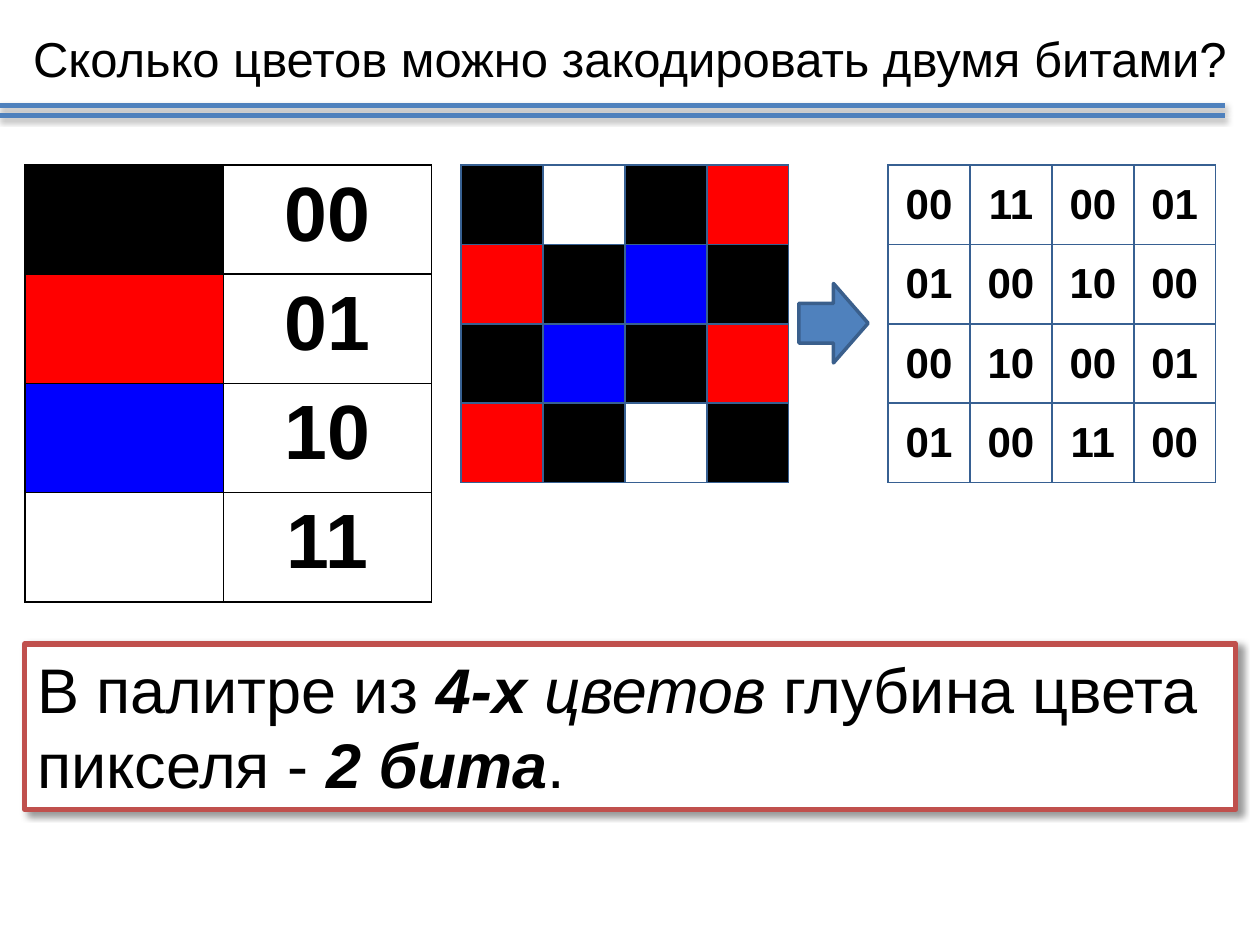
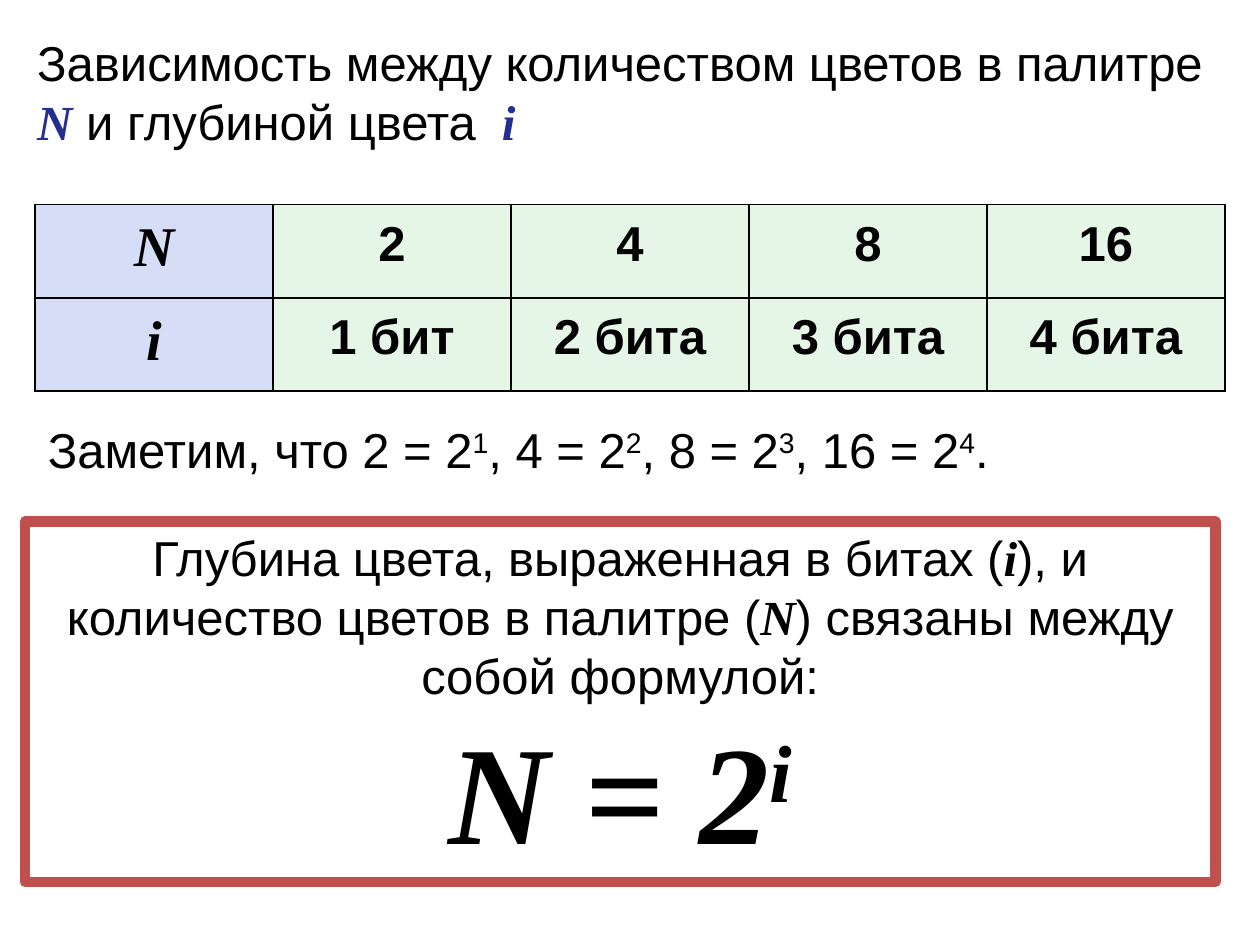
from lxml import etree
from pptx import Presentation
from pptx import util as u
from pptx.dml import color as dml
from pptx.enum import shapes, text
from pptx.oxml import ns

BLACK, WHITE, RED, BLUE = "000000", "FFFFFF", "FF0000", "0000FF"
ACCENT, ACCENT_EDGE, GRID, FRAME = "4F81BD", "3A5F8C", "376092", "C0504D"
HEAD_FILL, VALUE_FILL, SYMBOL_COLOR = "D6DEF7", "E6F6E6", "252F8F"
SANS, SERIF = "Arial", "Times New Roman"
CENTER, LEFT = text.PP_ALIGN.CENTER, text.PP_ALIGN.LEFT
TOP, MIDDLE = text.MSO_ANCHOR.TOP, text.MSO_ANCHOR.MIDDLE
STRONG = {"bold": True, "italic": True}
SYMBOL = {"font": SERIF, **STRONG}
POWER = {"sup": True}
PALETTE = {"00": BLACK, "01": RED, "10": BLUE, "11": WHITE}
PIXELS = ["00 11 00 01", "01 00 10 00", "00 10 00 01", "01 00 11 00"]


def rgb(value):
    """Turn a hex string into a colour."""
    return dml.RGBColor.from_string(value)


def points(*values):
    """Turn numbers into lengths in points."""
    return [u.Pt(v) for v in values]


def add_run(p, content, size=28, font=SANS, color=BLACK, bold=False, italic=False, sup=False):
    """Add one formatted run to a paragraph."""
    r = p.add_run()
    r.text = content
    f = r.font
    f.size, f.name, f.bold, f.italic = u.Pt(size), font, bold, italic
    f.color.rgb = rgb(color)
    if sup:
        f._element.set("baseline", "30000")


def write(tf, *paragraphs, align=LEFT, anchor=TOP, **fmt):
    """Fill a text frame with paragraphs of plain or (text, format) pieces."""
    tf.word_wrap = True
    tf.vertical_anchor = anchor
    for n, pieces in enumerate(paragraphs):
        p = tf.add_paragraph() if n else tf.paragraphs[0]
        p.alignment = align
        for piece in pieces:
            content, own = (piece, {}) if isinstance(piece, str) else piece
            add_run(p, content, **{**fmt, **own})


def add_text(slide, box, *paragraphs, **fmt):
    """Add a text box."""
    write(slide.shapes.add_textbox(*points(*box)).text_frame, *paragraphs, **fmt)


def set_shadow(s, opacity=0, blur=0, dist=0, angle=0):
    """Replace the theme shadow by a given one, or by none."""
    sp_pr = s._element.spPr
    for old in sp_pr.findall(ns.qn("a:effectLst")):
        sp_pr.remove(old)
    effects = etree.SubElement(sp_pr, ns.qn("a:effectLst"))
    if opacity:
        shadow = etree.SubElement(
            effects, ns.qn("a:outerShdw"), blurRad=str(u.Pt(blur)),
            dist=str(u.Pt(dist)), dir=str(angle * 60000), rotWithShape="0")
        tint = etree.SubElement(shadow, ns.qn("a:srgbClr"), val=BLACK)
        etree.SubElement(tint, ns.qn("a:alpha"), val=str(opacity * 1000))


def add_rule(slide, y):
    """Add a shadowed title rule."""
    s = slide.shapes.add_connector(shapes.MSO_CONNECTOR.STRAIGHT, *points(700, y, 0, y))
    s.line.color.rgb, s.line.width = rgb(ACCENT), u.Pt(3)
    set_shadow(s, 35, 3.1, 1.8, 90)


def add_shape(slide, kind, box, fill, line, width, **shadow):
    """Add a filled and outlined preset shape."""
    s = slide.shapes.add_shape(kind, *points(*box))
    s.fill.solid()
    s.fill.fore_color.rgb = rgb(fill)
    s.line.color.rgb, s.line.width = rgb(line), u.Pt(width)
    set_shadow(s, **shadow)
    return s


def set_borders(cell, color):
    """Draw a thin line on each side of a cell."""
    tc_pr = cell._tc.get_or_add_tcPr()
    for side in ("lnL", "lnR", "lnT", "lnB"):
        ln = etree.SubElement(tc_pr, ns.qn("a:" + side), w=str(u.Pt(1)))
        fill = etree.SubElement(ln, ns.qn("a:solidFill"))
        etree.SubElement(fill, ns.qn("a:srgbClr"), val=color)


def add_table(slide, left, top, widths, height, rows, border, pad=None, **fmt):
    """Add a table from rows of (text, fill, own format) cells."""
    frame = slide.shapes.add_table(
        len(rows), len(widths), *points(left, top, sum(widths), height * len(rows)))
    table = frame.table
    for column, width in zip(table.columns, widths):
        column.width = u.Pt(width)
    for y, row in enumerate(rows):
        table.rows[y].height = u.Pt(height)
        for x, (content, fill, own) in enumerate(row):
            cell = table.cell(y, x)
            set_borders(cell, border)
            cell.fill.solid()
            cell.fill.fore_color.rgb = rgb(fill)
            if pad:
                cell.margin_top = cell.margin_bottom = u.Pt(pad)
            if content:
                look = {**fmt, **own}
                cell.vertical_anchor = look.pop("anchor", TOP)
                write_cell(cell, content, **look)


def write_cell(cell, content, **fmt):
    """Write centred bold text in a cell."""
    p = cell.text_frame.paragraphs[0]
    p.alignment = CENTER
    add_run(p, content, **{"bold": True, **fmt})


def build_two_bits(slide):
    """Build the slide on coding colours with two bits."""
    add_text(slide, (0, 0, 720, 66), ["Сколько цветов можно закодировать двумя битами?"],
             align=CENTER, anchor=MIDDLE)
    for y in (60.3, 66):
        add_rule(slide, y)
    frame = add_shape(slide, shapes.MSO_SHAPE.RECTANGLE, (14.2, 368, 692, 94.5),
                      WHITE, FRAME, 3, opacity=40, blur=4, dist=3, angle=45)
    write(frame.text_frame,
          ["В палитре из ", ("4-х ", STRONG), ("цветов", {"italic": True}),
           " глубина цвета пикселя - ", ("2 бита", STRONG), "."], size=36)
    legend = [[("", color, {}), (code, WHITE, {})] for code, color in PALETTE.items()]
    add_table(slide, 14.2, 94.3, [113.5, 119], 62.4, legend, BLACK, size=44)
    add_shape(slide, shapes.MSO_SHAPE.RIGHT_ARROW, (456.5, 162, 39.6, 45.4),
              ACCENT, ACCENT_EDGE, 2)
    codes = [line.split() for line in PIXELS]
    image = [[("", PALETTE[code], {}) for code in row] for row in codes]
    coded = [[(code, WHITE, {}) for code in row] for row in codes]
    for left, rows in ((263.5, image), (507.5, coded)):
        add_table(slide, left, 94.3, [46.8] * 4, 45.36, rows, GRID, size=24, anchor=MIDDLE)


def build_formula(slide):
    """Build the slide on palette size and colour depth."""
    blue_symbol = {**SYMBOL, "color": SYMBOL_COLOR}
    add_text(slide, (14.2, 15.1, 689, 97),
             ["Зависимость между количеством цветов в палитре ", ("N", blue_symbol),
              " и глубиной цвета ", (" i", blue_symbol)])
    values = {"N": ["2", "4", "8", "16"], "i": ["1 бит", "2 бита", "3 бита", "4 бита"]}
    rows = [[(name, HEAD_FILL, {"size": 32, **SYMBOL})] + [(v, VALUE_FILL, {}) for v in row]
            for name, row in values.items()]
    add_table(slide, 20, 116.8, [136] * 5, 53.4, rows, BLACK, pad=7.2)
    powers = ["Заметим, что "]
    for n in range(1, 5):
        powers += [f"{2 ** n} = 2", (str(n), POWER), ", " if n < 4 else "."]
    add_text(slide, (20.2, 236.2, 635, 41), powers)
    frame = add_shape(slide, shapes.MSO_SHAPE.RECTANGLE, (14.2, 298, 680.4, 206),
                      WHITE, FRAME, 6)
    formula = {**SYMBOL, "size": 80}
    write(frame.text_frame,
          ["Глубина цвета, выраженная в битах (", ("i", SYMBOL),
           "), и количество цветов в палитре (", ("N", SYMBOL),
           ") связаны между собой формулой:"],
          [("N = 2", formula), ("i", {**formula, **POWER})], align=CENTER)


def main():
    """Build and save the presentation."""
    prs = Presentation()
    prs.slide_width, prs.slide_height = points(720, 540)
    for build in (build_two_bits, build_formula):
        build(prs.slides.add_slide(prs.slide_layouts[6]))
    prs.save("out.pptx")


if __name__ == "__main__":
    main()
